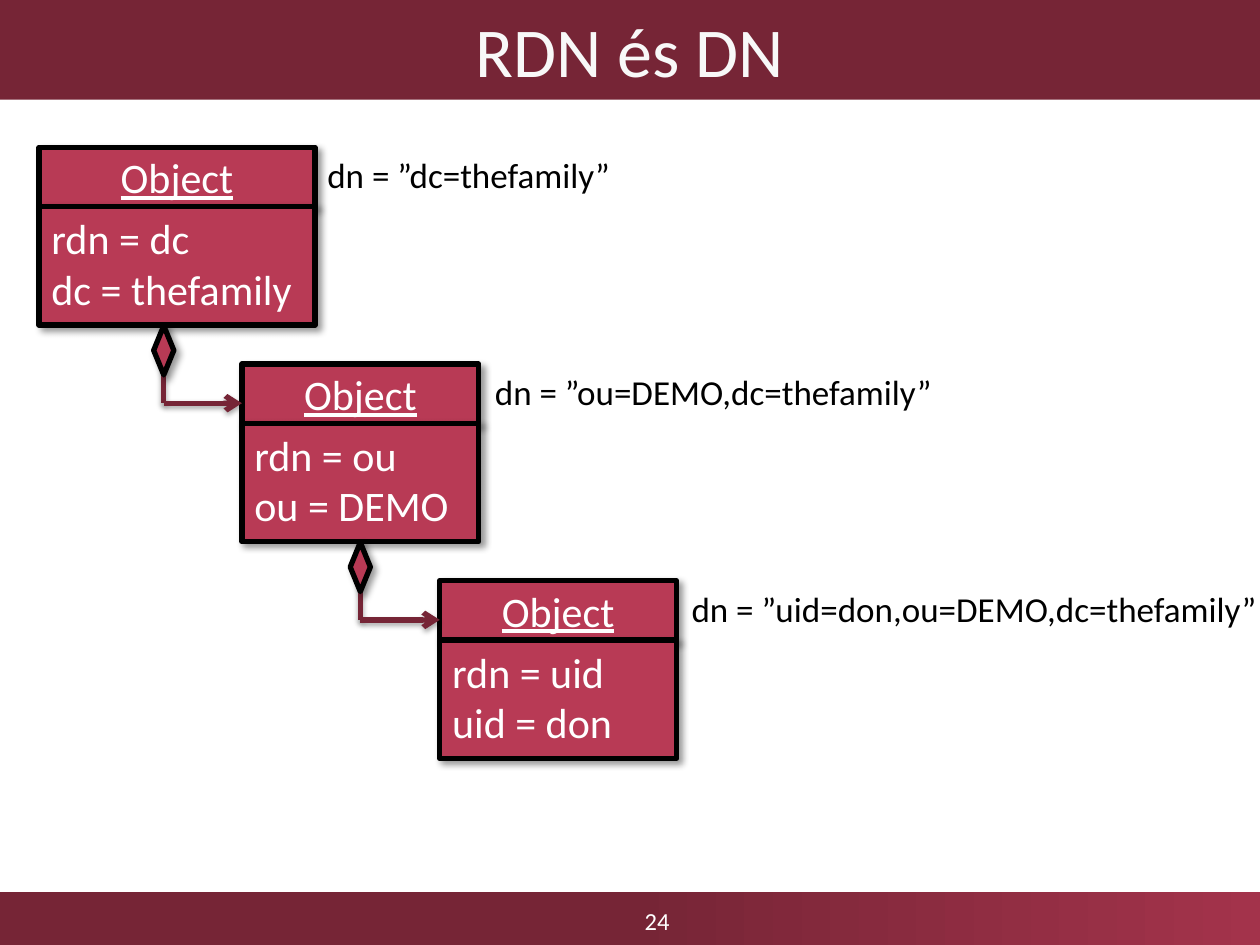
from dataclasses import dataclass

from lxml import etree
from pptx import Presentation
from pptx import util as u
from pptx.dml.color import RGBColor
from pptx.enum import shapes, text
from pptx.oxml import ns


@dataclass(frozen=True)
class Theme:
    font: str = "Calibri"
    dark: str = "762536"
    light: str = "A3334B"
    box: str = "B83A55"
    black: str = "000000"
    white: str = "FFFFFF"
    title: str = "F8F8F8"
    title_size: int = 40
    box_size: int = 24
    label_size: int = 20
    number_size: int = 14
    line: int = 3


T = Theme()
rgb = RGBColor.from_string


def write(tf, lines, size, color, align=text.PP_ALIGN.LEFT,
          anchor=text.MSO_ANCHOR.MIDDLE, wrap=True, underline=None):
    tf.word_wrap = wrap
    tf.vertical_anchor = anchor
    for i, line in enumerate(lines):
        p = tf.paragraphs[0] if i == 0 else tf.add_paragraph()
        p.alignment = align
        r = p.add_run()
        r.text = line
        style = {"name": T.font, "size": u.Pt(size), "underline": underline}
        for key, value in style.items():
            setattr(r.font, key, value)
        r.font.color.rgb = rgb(color)


def outline(sp, color, alpha, blur, dist, angle):
    sp.line.color.rgb = rgb(color)
    sp.line.width = u.Pt(T.line)
    effects = etree.SubElement(sp._element.spPr, ns.qn("a:effectLst"))
    shadow = etree.SubElement(
        effects, ns.qn("a:outerShdw"), blurRad=str(u.Pt(blur)),
        dist=str(u.Pt(dist)), dir=str(angle * 60000), rotWithShape="0")
    shade = etree.SubElement(shadow, ns.qn("a:srgbClr"), val=T.black)
    etree.SubElement(shade, ns.qn("a:alpha"), val=str(alpha * 1000))


prs = Presentation()
prs.slide_width, prs.slide_height = u.Inches(10), u.Inches(7.5)
s = prs.slides.add_slide(prs.slide_layouts[5])
center = text.PP_ALIGN.CENTER
rect = shapes.MSO_SHAPE.RECTANGLE
box_shadow = (T.black, 40, 4, 3, 45)
line_shadow = (T.dark, 35, 3.1, 1.8, 90)

footer = s.shapes.add_shape(rect, 0, u.Inches(7.08), prs.slide_width, u.Inches(0.42))
footer.shadow.inherit = False
footer.line.fill.background()
footer.fill.gradient()
footer.fill.gradient_angle = 0
for stop, position, color in zip(footer.fill.gradient_stops, (0.5, 1), (T.dark, T.light)):
    stop.position = position
    stop.color.rgb = rgb(color)

number = s.shapes.add_textbox(u.Inches(3.59), u.Inches(7.11), u.Inches(3.25), u.Inches(0.39))
write(number.text_frame, ["24"], T.number_size, T.white, center)

title = s.shapes.title
place = {"left": 0, "top": 0, "width": prs.slide_width, "height": u.Inches(0.79)}
for key, value in place.items():
    setattr(title, key, value)
title.fill.solid()
title.fill.fore_color.rgb = rgb(T.dark)
write(title.text_frame, ["RDN és DN"], T.title_size, T.title, center)

top, step, head_h, body_h = 1.17, 1.72, 0.47, 0.94
objects = [
    (0.31, 2.19, ["rdn = dc", "dc = thefamily"], "dn = ”dc=thefamily”", 2.5, 2.47),
    (1.92, 1.88, ["rdn = ou", "ou = DEMO"], "dn = ”ou=DEMO,dc=thefamily”", 3.83, 3.7),
    (3.49, 1.88, ["rdn = uid", "uid = don"], "dn = ”uid=don,ou=DEMO,dc=thefamily”", 5.39, 4.73),
]

for i, (x, w, attributes, dn, dn_x, dn_w) in enumerate(objects):
    y = top + i * step
    parts = [
        (y, head_h, ["Object"], center, text.MSO_ANCHOR.MIDDLE, True),
        (y + head_h, body_h, attributes, text.PP_ALIGN.LEFT, text.MSO_ANCHOR.TOP, None),
    ]
    for part_y, h, lines, align, anchor, underline in parts:
        sp = s.shapes.add_shape(rect, u.Inches(x), u.Inches(part_y), u.Inches(w), u.Inches(h))
        sp.fill.solid()
        sp.fill.fore_color.rgb = rgb(T.box)
        outline(sp, *box_shadow)
        write(sp.text_frame, lines, T.box_size, T.white, align, anchor, underline=underline)

    label = s.shapes.add_textbox(u.Inches(dn_x), u.Inches(y), u.Inches(dn_w), u.Inches(0.44))
    write(label.text_frame, [dn], T.label_size, T.black,
          anchor=text.MSO_ANCHOR.TOP, wrap=False)

for i, (stem_x, child) in enumerate(zip((1.3, 2.86), objects[1:])):
    start_y = top + i * step + head_h + body_h
    end_y = start_y + 0.62
    link = s.shapes.add_group_shape()
    for x1, y1, x2, y2 in [(stem_x, start_y, stem_x, end_y), (stem_x, end_y, child[0], end_y)]:
        line = link.shapes.add_connector(
            shapes.MSO_CONNECTOR.STRAIGHT, *map(u.Inches, (x1, y1, x2, y2)))
        outline(line, *line_shadow)
    etree.SubElement(line.line._get_or_add_ln(), ns.qn("a:tailEnd"), type="arrow")
    diamond = link.shapes.add_shape(
        shapes.MSO_SHAPE.FLOWCHART_DECISION, u.Inches(stem_x - 0.195),
        u.Inches(start_y + 0.12), u.Inches(0.39), u.Inches(0.16))
    diamond.rotation = 270
    diamond.fill.solid()
    diamond.fill.fore_color.rgb = rgb(T.box)
    outline(diamond, *box_shadow)

prs.save("out.pptx")
